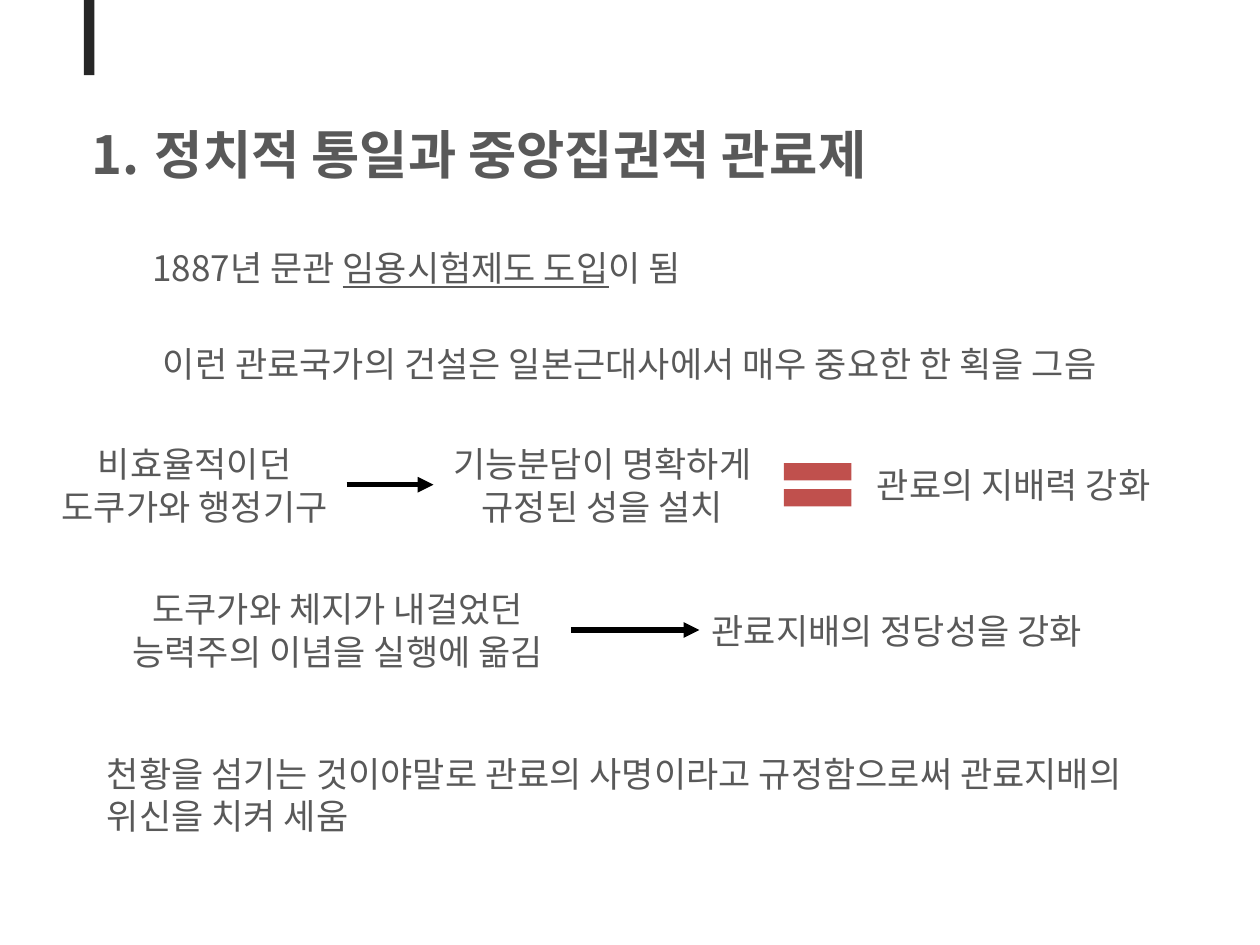
from lxml import etree
from pptx import Presentation
from pptx.dml.color import RGBColor
from pptx.enum import shapes, text
from pptx.oxml import ns
from pptx.util import Pt

FONT = "Noto Sans CJK KR"
GREY = "595959"
LINE_RATIO = 1.21


def color(value):
    return RGBColor.from_string(value)


def child(parent, tag, **attributes):
    return etree.SubElement(parent, ns.qn(tag), attributes)


def add_run(paragraph, words, size=20, bold=False, underline=False):
    run = paragraph.add_run()
    run.text = words
    font = run.font
    font.size, font.bold, font.underline = Pt(size), bold, underline
    font.color.rgb = color(GREY)
    font.name = FONT
    child(run._r.get_or_add_rPr(), "a:ea", typeface=FONT)


class Page:
    """Holds the slide and its shared style."""

    def __init__(self, slide):
        self.slide = slide

    def text(self, left, middle, width, *lines, size=20, bold=False, center=False):
        """Add a box centred on middle; a line is a string or (words, underline) pairs."""
        height = 7.2 + LINE_RATIO * size * len(lines)
        box = self.slide.shapes.add_textbox(
            Pt(left), Pt(middle - height / 2), Pt(width), Pt(height))
        frame = box.text_frame
        frame.word_wrap = True
        frame.auto_size = text.MSO_AUTO_SIZE.SHAPE_TO_FIT_TEXT
        for index, line in enumerate(lines):
            paragraph = frame.add_paragraph() if index else frame.paragraphs[0]
            paragraph.alignment = text.PP_ALIGN.CENTER if center else text.PP_ALIGN.LEFT
            paragraph.line_spacing = Pt(LINE_RATIO * size)
            pieces = [(line, False)] if isinstance(line, str) else line
            for words, underline in pieces:
                add_run(paragraph, words, size, bold, underline)
        return box

    def number(self, box, indent):
        """Number the first paragraph of the box with a hanging indent."""
        properties = box.text_frame.paragraphs[0]._p.get_or_add_pPr()
        properties.set("marL", str(Pt(indent)))
        properties.set("indent", str(Pt(-indent)))
        child(properties, "a:buFont", typeface="+mj-lt")
        child(properties, "a:buAutoNum", type="arabicPeriod")

    def shape(self, kind, left, top, width, height, fill):
        item = self.slide.shapes.add_shape(kind, Pt(left), Pt(top), Pt(width), Pt(height))
        item.shadow.inherit = False
        item.fill.solid()
        item.fill.fore_color.rgb = color(fill)
        item.line.fill.background()

    def arrow(self, cause, effect):
        """Join the right side of one box to the left side of the next."""
        line = self.slide.shapes.add_connector(shapes.MSO_CONNECTOR.STRAIGHT, 0, 0, 0, 0)
        line.begin_connect(cause, 3)
        line.end_connect(effect, 1)
        line.line.color.rgb = color("000000")
        line.line.width = Pt(3)
        child(line.line._get_or_add_ln(), "a:tailEnd", type="triangle")
        child(line._element.spPr, "a:effectLst")


def main():
    deck = Presentation()
    deck.slide_width, deck.slide_height = Pt(720), Pt(540)
    page = Page(deck.slides.add_slide(deck.slide_layouts[6]))

    page.shape(shapes.MSO_SHAPE.RECTANGLE, 48, 0, 6, 43, "262626")
    title = page.text(45.4, 87.5, 564.5, "정치적 통일과 중앙집권적 관료제", size=30, bold=True)
    page.number(title, 36)

    page.text(80, 153, 335, [("1887년 문관 ", False), ("임용시험제도 도입", True),
                             ("이 됨", False)])
    page.text(61, 207.5, 598, "이런 관료국가의 건설은 일본근대사에서 매우 중요한 한 획을 그음",
              center=True)

    reform_row = 277
    old_offices = page.text(24.5, reform_row, 173.5, "비효율적이던", "도쿠가와 행정기구",
                            center=True)
    ministries = page.text(247.7, reform_row, 193, "기능분담이 명확하게", "규정된 성을 설치",
                           center=True)
    page.arrow(old_offices, ministries)
    page.shape(shapes.MSO_SHAPE.MATH_EQUAL, 441, reform_row - 21, 52.5, 42, "C0504D")
    page.text(494, reform_row, 180, "관료의 지배력 강화")

    merit_row = 360
    merit = page.text(59.8, merit_row, 266.4, "도쿠가와 체지가 내걸었던",
                      "능력주의 이념을 실행에 옮김", center=True)
    legitimacy = page.text(399.6, merit_row, 238.5, "관료지배의 정당성을 강화")
    page.arrow(merit, legitimacy)

    page.text(54, 442, 622, "천황을 섬기는 것이야말로 관료의 사명이라고 규정함으로써 관료지배의 위신을 치켜 세움")

    deck.save("out.pptx")


if __name__ == "__main__":
    main()
